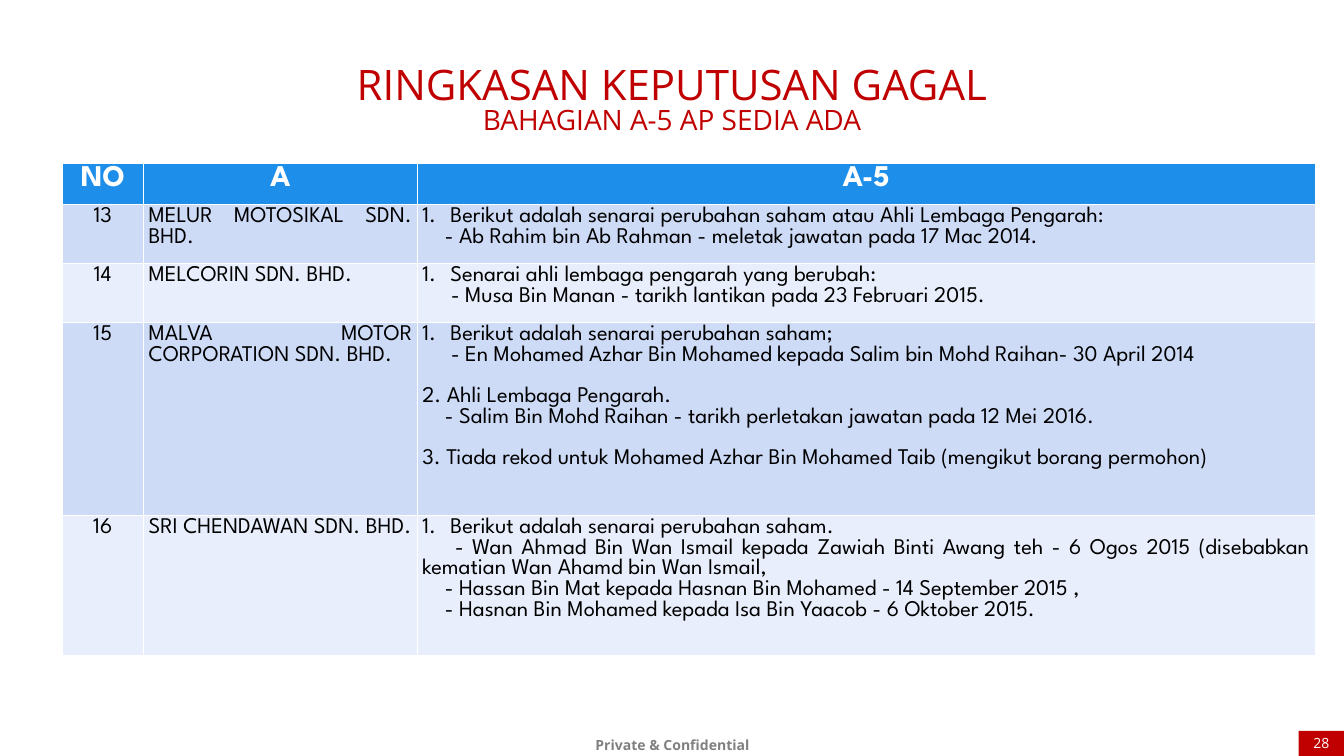
from lxml.etree import SubElement
from pptx import Presentation
from pptx.dml.color import RGBColor
from pptx.enum.shapes import MSO_SHAPE
from pptx.enum.text import MSO_ANCHOR, PP_ALIGN
from pptx.oxml.ns import qn
from pptx.util import Inches, Pt

THEME = {
    "head_font": "Open Sans", "body_font": "League Spartan",
    "red": "C00000", "grey": "808080", "white": "FFFFFF", "black": "000000",
    "header": "1D8EEA", "bands": ("CDDBF7", "E8EEFB"),
    "title": 60, "subtitle": 40, "th": 43, "td": 32, "small": 20,
}
TITLE = "RINGKASAN KEPUTUSAN GAGAL"
SUBTITLE = "BAHAGIAN A-5 AP SEDIA ADA"
FOOTER = "Private & Confidential"
PAGE = "28"
HEADERS = ("NO", "A", "A-5")
COL_WIDTHS = (1.62, 5.43, 17.82)
ROW_HEIGHTS = (0.81, 1.17, 1.17, 3.83, 2.78)

NUMBERED = {"number": True}
DETAIL = {"indent": 0.45}
DEEP = {"indent": 0.57}
NEW_ITEM = {"before": 29.5}
ROWS = [
    ("13", "MELUR MOTOSIKAL SDN. BHD.", [
        ("Berikut adalah senarai perubahan saham atau Ahli Lembaga Pengarah:", NUMBERED),
        ("- Ab Rahim bin Ab Rahman - meletak jawatan pada 17 Mac 2014.", DETAIL),
    ]),
    ("14", "MELCORIN SDN. BHD.", [
        ("Senarai ahli lembaga pengarah yang berubah:", NUMBERED),
        ("- Musa Bin Manan - tarikh lantikan pada 23 Februari 2015.", DEEP),
    ]),
    ("15", "MALVA MOTOR CORPORATION SDN. BHD.", [
        ("Berikut adalah senarai perubahan saham;", NUMBERED),
        ("- En Mohamed Azhar Bin Mohamed kepada Salim bin Mohd Raihan- 30 April 2014", DEEP),
        ("2. Ahli Lembaga Pengarah.", NEW_ITEM),
        ("- Salim Bin Mohd Raihan - tarikh perletakan jawatan pada 12 Mei 2016.", DETAIL),
        ("3. Tiada rekod untuk Mohamed Azhar Bin Mohamed Taib (mengikut borang permohon)", NEW_ITEM),
    ]),
    ("16", "SRI CHENDAWAN SDN. BHD.", [
        ("Berikut adalah senarai perubahan saham.", NUMBERED),
        ("- Wan Ahmad Bin Wan Ismail kepada Zawiah Binti Awang teh - 6 Ogos 2015 "
         "(disebabkan kematian Wan Ahamd bin Wan Ismail,", {"indent": 0.65}),
        ("- Hassan Bin Mat kepada Hasnan Bin Mohamed - 14 September 2015 ,", DETAIL),
        ("- Hasnan Bin Mohamed kepada Isa Bin Yaacob - 6 Oktober 2015.", DETAIL),
    ]),
]


def write(tf, text, size="td", color="black", font="body_font", bold=False,
          align=PP_ALIGN.JUSTIFY, spacing=None, before=None, indent=0, number=False):
    p = tf.paragraphs[0]
    if p.runs:
        p = tf.add_paragraph()
    p.alignment = align
    if spacing:
        p.line_spacing = spacing
    if before:
        p.space_before = Pt(before)
    pPr = p._p.get_or_add_pPr()
    if number:
        pPr.set("marL", str(Inches(0.56)))
        pPr.set("indent", str(Inches(-0.56)))
        SubElement(pPr, qn("a:buFont")).set("typeface", "+mj-lt")
        SubElement(pPr, qn("a:buAutoNum")).set("type", "arabicPeriod")
    elif indent:
        pPr.set("marL", "0")
        pPr.set("indent", str(Inches(indent)))
    r = p.add_run()
    r.text = text
    r.font.name = THEME[font]
    r.font.size = Pt(THEME[size])
    r.font.bold = bold
    r.font.color.rgb = RGBColor.from_string(THEME[color])


def set_insets(tf, x, y):
    tf.word_wrap = True
    tf.margin_left = tf.margin_right = Inches(x)
    tf.margin_top = tf.margin_bottom = Inches(y)


def add_text_box(s, box, x, y):
    tf = s.shapes.add_textbox(*map(Inches, box)).text_frame
    set_insets(tf, x, y)
    return tf


def fill(target, color):
    target.fill.solid()
    target.fill.fore_color.rgb = RGBColor.from_string(color)


def add_results(s):
    frame = s.shapes.add_table(
        len(ROWS) + 1, len(HEADERS), Inches(1.23), Inches(3.24),
        Inches(sum(COL_WIDTHS)), Inches(sum(ROW_HEIGHTS)))
    table = frame.table
    for col, width in zip(table.columns, COL_WIDTHS):
        col.width = Inches(width)
    for row, height in zip(table.rows, ROW_HEIGHTS):
        row.height = Inches(height)
    for cell, text in zip(table.rows[0].cells, HEADERS):
        fill(cell, THEME["header"])
        write(cell.text_frame, text, size="th", color="white", bold=True,
              align=PP_ALIGN.CENTER)
    for i, (no, company, notes) in enumerate(ROWS):
        cells = list(table.rows[i + 1].cells)
        for cell in cells:
            fill(cell, THEME["bands"][i % 2])
        write(cells[0].text_frame, no, align=PP_ALIGN.CENTER)
        write(cells[1].text_frame, company)
        for text, style in notes:
            write(cells[2].text_frame, text, **style)


def main():
    prs = Presentation()
    prs.slide_width, prs.slide_height = Inches(26.67), Inches(15)
    s = prs.slides.add_slide(prs.slide_layouts[6])
    heading = {"font": "head_font", "align": PP_ALIGN.CENTER}

    tf = add_text_box(s, (11.53, 14.42, 3.63, 0.78), 0.24, 0.12)
    write(tf, FOOTER, size="small", color="grey", bold=True, spacing=1.2, **heading)

    tf = add_text_box(s, (1.53, 1.04, 23.61, 1.95), 0.27, 0.13)
    write(tf, TITLE, size="title", color="red", **heading)
    write(tf, SUBTITLE, size="subtitle", color="red", spacing=0.8, **heading)

    sp = s.shapes.add_shape(MSO_SHAPE.RECTANGLE, *map(Inches, (25.77, 14.5, 0.9, 0.5)))
    sp.shadow.inherit = False
    fill(sp, THEME["red"])
    sp.line.fill.background()
    set_insets(sp.text_frame, 0, 0.2)
    sp.text_frame.vertical_anchor = MSO_ANCHOR.MIDDLE
    write(sp.text_frame, PAGE, size="small", color="white", **heading)

    add_results(s)
    prs.save("out.pptx")


if __name__ == "__main__":
    main()
